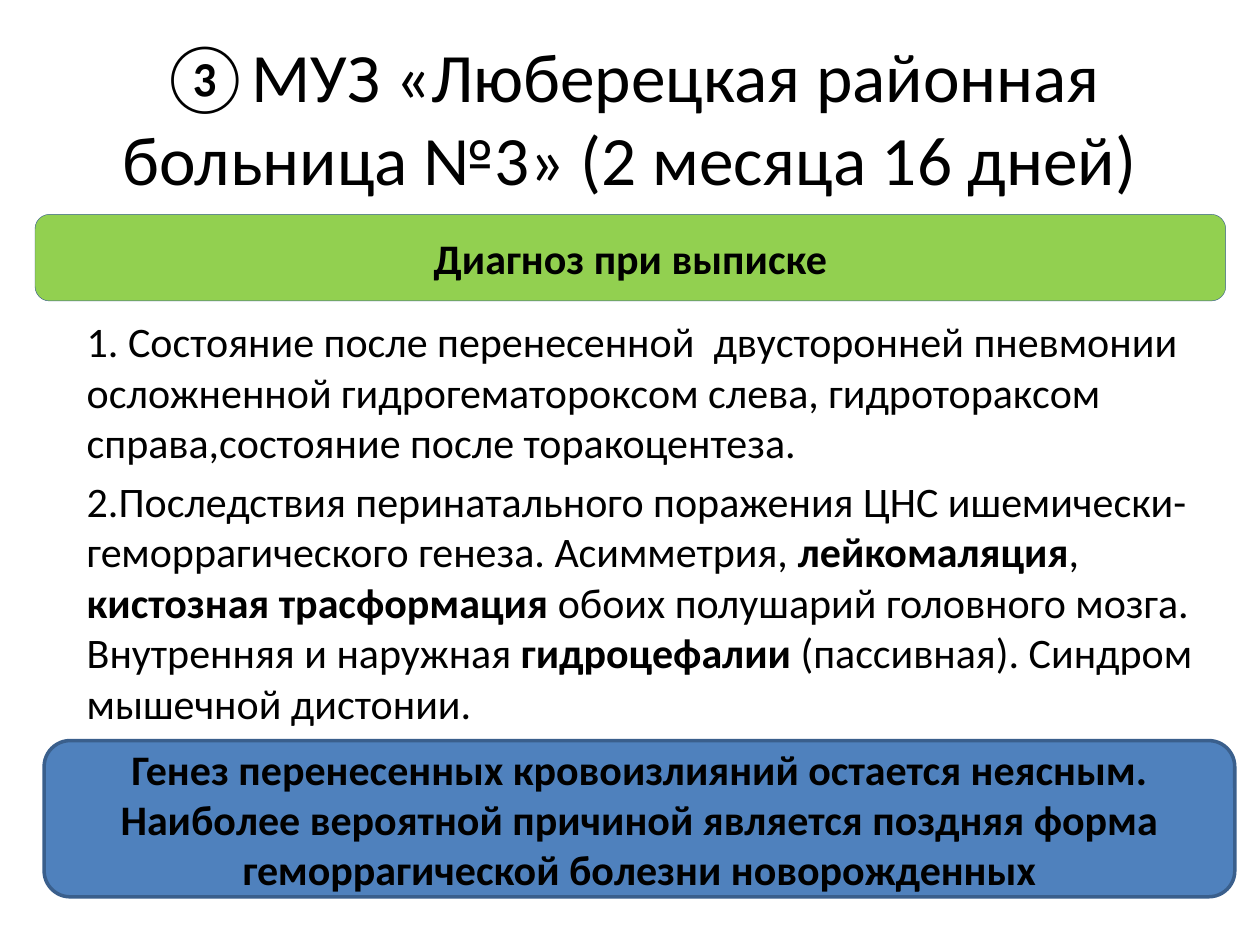
import pptx
import pptx.dml.color
import pptx.enum.shapes
import pptx.enum.text
import pptx.util
from dataclasses import dataclass

Pt = pptx.util.Pt
RGB = pptx.dml.color.RGBColor.from_string
Align = pptx.enum.text.PP_ALIGN
Anchor = pptx.enum.text.MSO_ANCHOR
Fit = pptx.enum.text.MSO_AUTO_SIZE


@dataclass(frozen=True)
class Theme:
    font: str = "Calibri"
    ink: str = "000000"
    edge: str = "3A5F8C"
    green: str = "92D050"
    blue: str = "4F81BD"
    head: float = 39.6
    text: float = 24


THEME = Theme()
TITLE = "③МУЗ «Люберецкая районная больница №3» (2 месяца 16 дней)"
LABEL = "Диагноз при выписке"
NOTE = ("Генез перенесенных кровоизлияний остается неясным. "
        "Наиболее вероятной причиной является поздняя форма "
        "геморрагической болезни новорожденных")
# Each paragraph alternates plain and bold parts, plain first.
BODY = [
    ["1. Состояние после перенесенной  двусторонней пневмонии "
     "осложненной гидрогематороксом слева, гидротораксом "
     "справа,состояние после торакоцентеза."],
    ["2.Последствия перинатального поражения ЦНС ишемически-"
     "геморрагического генеза. Асимметрия, ",
     "лейкомаляция", ", ", "кистозная трасформация",
     " обоих полушарий головного мозга. Внутренняя и наружная ",
     "гидроцефалии", " (пассивная). Синдром мышечной дистонии."],
]


def apply(item, form):
    for name, value in form.items():
        setattr(item, name, value)


def place(shape, box):
    names = ("left", "top", "width", "height")
    apply(shape, dict(zip(names, map(Pt, box))))


def add_run(para, text, size, bold=False):
    run = para.add_run()
    run.text = text
    apply(run.font, {"name": THEME.font, "size": Pt(size), "bold": bold})
    run.font.color.rgb = RGB(THEME.ink)


def set_line(shape, text, size, bold=False):
    """Fill a shape with one centred paragraph."""
    frame = shape.text_frame
    apply(frame, {"word_wrap": True, "auto_size": Fit.NONE,
                  "vertical_anchor": Anchor.MIDDLE})
    para = frame.paragraphs[0]
    para.alignment = Align.CENTER
    add_run(para, text, size, bold)


def add_title(slide, box):
    title = slide.shapes.title
    place(title, box)
    set_line(title, TITLE, THEME.head)


def add_body(slide, box):
    frame = slide.shapes.add_textbox(*map(Pt, box)).text_frame
    apply(frame, {"word_wrap": True, "auto_size": Fit.NONE})
    for i, parts in enumerate(BODY):
        para = frame.add_paragraph() if i else frame.paragraphs[0]
        para.space_before = Pt(0.2 * THEME.text)
        for j, part in enumerate(parts):
            add_run(para, part, THEME.text, j % 2 == 1)


def add_band(slide, box, text, fill, width):
    kind = pptx.enum.shapes.MSO_SHAPE.ROUNDED_RECTANGLE
    band = slide.shapes.add_shape(kind, *map(Pt, box))
    band.shadow.inherit = False
    band.fill.solid()
    band.fill.fore_color.rgb = RGB(fill)
    band.line.color.rgb = RGB(THEME.edge)
    band.line.width = Pt(width)
    set_line(band, text, THEME.text, True)


def main():
    deck = pptx.Presentation()
    apply(deck, {"slide_width": Pt(720), "slide_height": Pt(540)})
    slide = deck.slides.add_slide(deck.slide_layouts[5])
    add_body(slide, (42.5, 177, 648, 268.5))
    add_title(slide, (36, 21.6, 648, 90))
    add_band(slide, (25.2, 423.2, 680.4, 89.3), NOTE, THEME.blue, 2)
    add_band(slide, (20, 122.5, 680.4, 49.5), LABEL, THEME.green, 0.25)
    deck.save("out.pptx")


if __name__ == "__main__":
    main()
